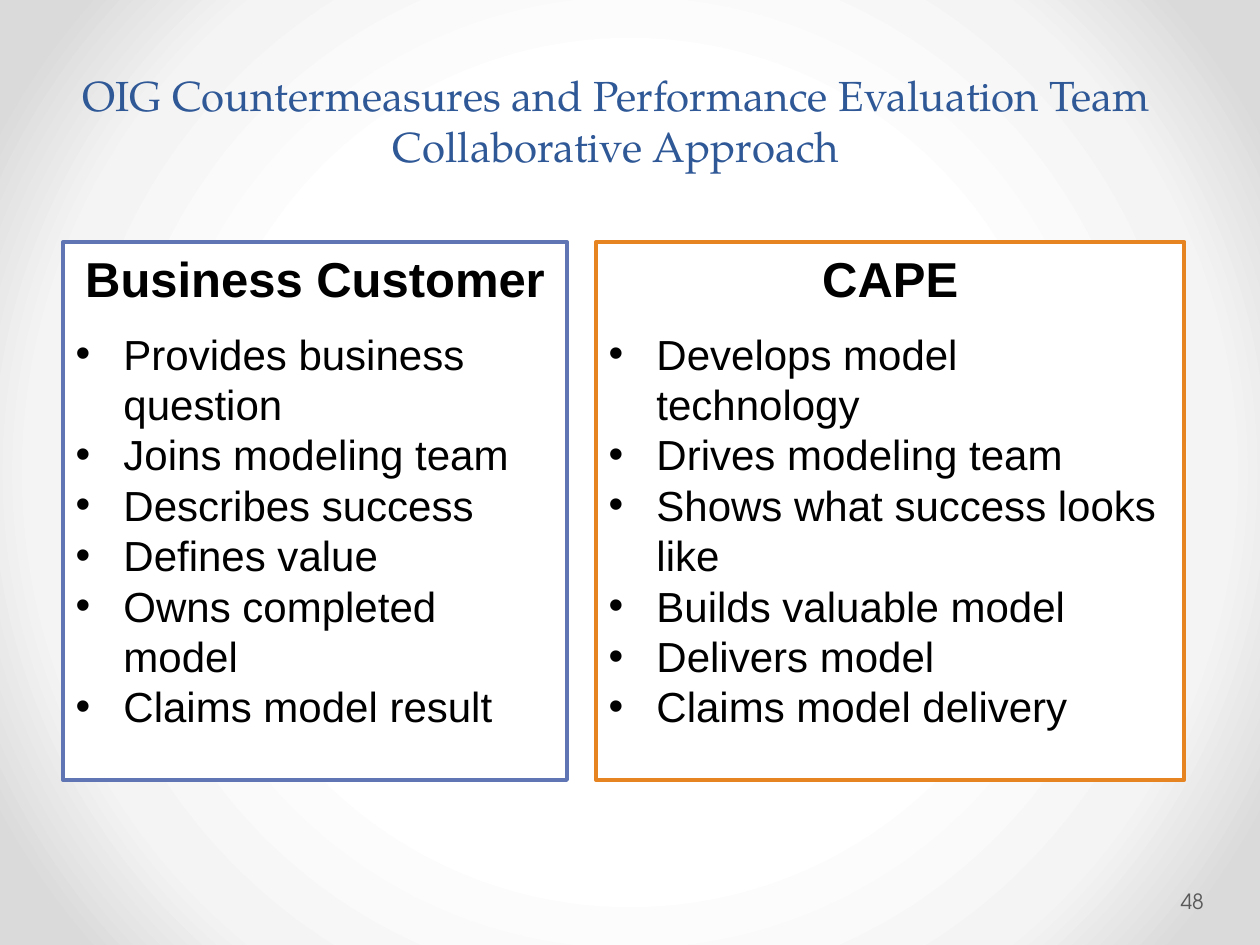
from lxml.etree import SubElement
from pptx import Presentation
from pptx.dml.color import RGBColor
from pptx.enum.text import MSO_ANCHOR, MSO_AUTO_SIZE, PP_ALIGN
from pptx.oxml import parse_xml
from pptx.oxml.ns import nsdecls, qn
from pptx.util import Inches, Pt

HUES = {
    "title": "2F5897",
    "text": "000000",
    "number": "595959",
    "panel": "FFFFFF",
    "customer": "6076B4",
    "cape": "E68422",
}
GLOW = {50: "FFFFFF", 76: "F4F4F4", 92: "DADADA"}
PANELS = [
    ("Business Customer", "customer", 0.5, 4, [
        "Provides business question",
        "Joins modeling team",
        "Describes success",
        "Defines value",
        "Owns completed model",
        "Claims model result",
    ]),
    ("CAPE", "cape", 4.73, 4.67, [
        "Develops model technology",
        "Drives modeling team",
        "Shows what success looks like",
        "Builds valuable model",
        "Delivers model",
        "Claims model delivery",
    ]),
]


def color(key):
    return RGBColor.from_string(HUES[key])


def place(shape, left, top, width, height):
    shape.left, shape.top = Inches(left), Inches(top)
    shape.width, shape.height = Inches(width), Inches(height)


def style(para, face, size, hue, bold=False):
    font = para.font
    font.name, font.size, font.bold = face, Pt(size), bold
    font.color.rgb = color(hue)


def set_bullet(para, mark=None):
    props = para._p.get_or_add_pPr()
    indent = Inches(0.38) if mark else 0
    props.set("marL", str(indent))
    props.set("indent", str(-indent))
    if mark:
        SubElement(props, qn("a:buFont")).set("typeface", "Arial")
        SubElement(props, qn("a:buChar")).set("char", mark)
    else:
        SubElement(props, qn("a:buNone"))


def paint_back(slide):
    fill = slide.background.fill
    fill.gradient()
    old = slide.element.find(".//" + qn("a:gradFill"))
    stops = "".join(
        f'<a:gs pos="{pos * 1000}"><a:srgbClr val="{hue}"/></a:gs>'
        for pos, hue in GLOW.items()
    )
    new = parse_xml(
        f'<a:gradFill {nsdecls("a")} rotWithShape="1"><a:gsLst>{stops}</a:gsLst>'
        '<a:path path="circle"><a:fillToRect l="50000" t="50000" r="50000" b="50000"/>'
        "</a:path></a:gradFill>"
    )
    old.getparent().replace(old, new)


def add_title(slide, text):
    title = slide.shapes.title
    place(title, 0.39, 0.33, 9, 1.25)
    frame = title.text_frame
    frame.text = text
    frame.vertical_anchor = MSO_ANCHOR.MIDDLE
    para = frame.paragraphs[0]
    para.alignment = PP_ALIGN.CENTER
    style(para, "TeX Gyre Pagella", 24, "title")


def add_panel(holder, head, hue, left, width, items):
    place(holder, left, 1.92, width, 4.27)
    holder.fill.solid()
    holder.fill.fore_color.rgb = color("panel")
    holder.line.color.rgb = color(hue)
    holder.line.width = Pt(2.25)
    frame = holder.text_frame
    frame.auto_size = MSO_AUTO_SIZE.NONE
    frame.vertical_anchor = MSO_ANCHOR.TOP
    para = frame.paragraphs[0]
    para.text = head
    para.alignment = PP_ALIGN.CENTER
    para.space_before = Pt(0)
    set_bullet(para)
    style(para, "Arial", 28, "text", True)
    for row, item in enumerate(items):
        para = frame.add_paragraph()
        para.text = item
        para.space_before = Pt(0 if row else 12)
        set_bullet(para, "•")
        style(para, "Arial", 24, "text")


def add_number(slide, text):
    box = slide.shapes.add_textbox(0, 0, 0, 0)
    place(box, 9.34, 6.95, 0.61, 0.4)
    frame = box.text_frame
    frame.word_wrap = True
    frame.vertical_anchor = MSO_ANCHOR.MIDDLE
    frame.margin_left = Inches(0.03)
    frame.margin_right = Inches(0.05)
    frame.text = text
    style(frame.paragraphs[0], "TeX Gyre Adventor", 12, "number")


def main():
    deck = Presentation()
    deck.slide_width, deck.slide_height = Inches(10), Inches(7.5)
    slide = deck.slides.add_slide(deck.slide_layouts[3])
    paint_back(slide)
    add_title(slide, "OIG Countermeasures and Performance Evaluation Team Collaborative Approach")
    for holder, panel in zip(list(slide.placeholders)[1:], PANELS):
        add_panel(holder, *panel)
    add_number(slide, "48")
    deck.save("out.pptx")


if __name__ == "__main__":
    main()
